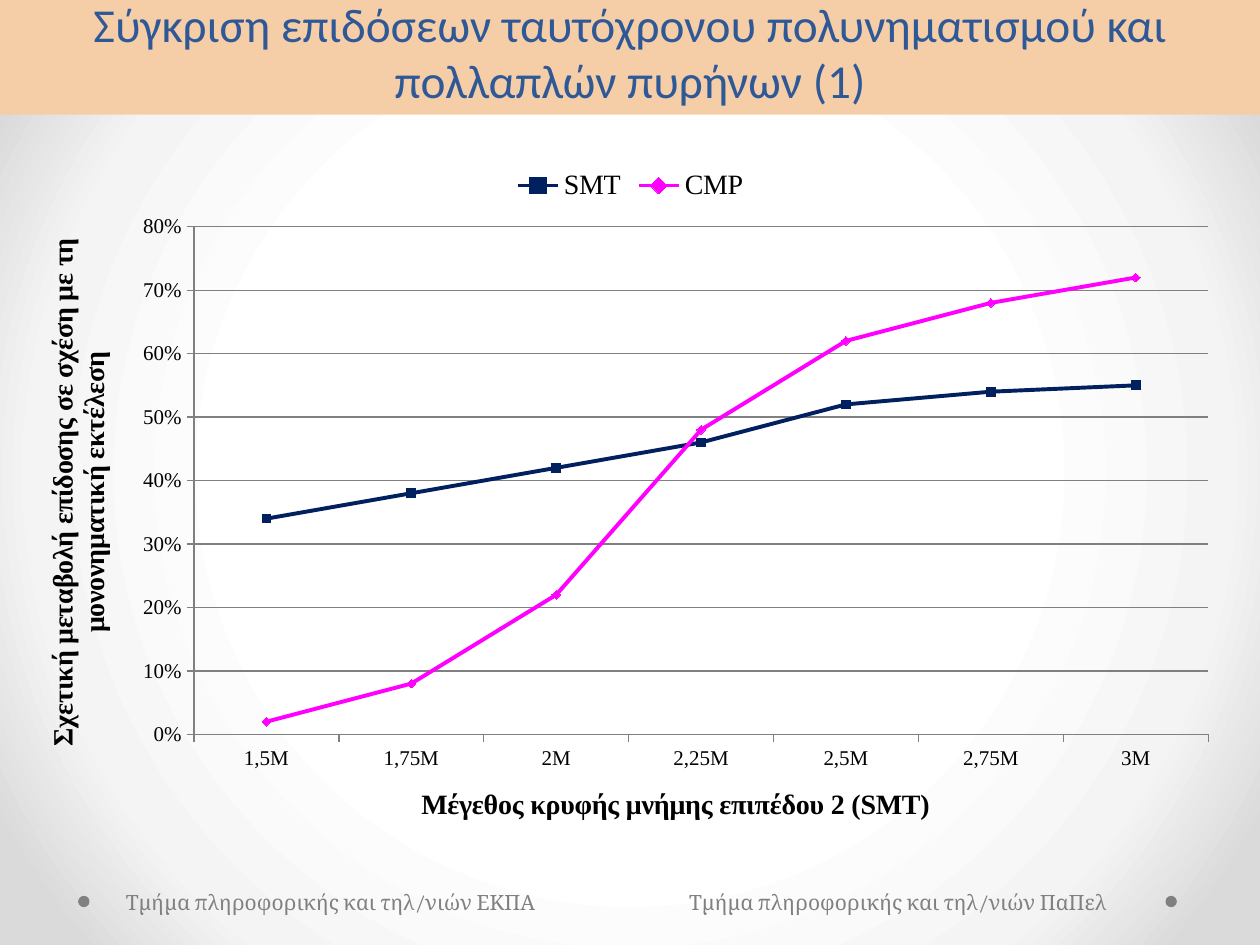
from lxml import etree
from pptx import Presentation
from pptx.chart.data import CategoryChartData
from pptx.dml.color import RGBColor
from pptx.enum.chart import (XL_CHART_TYPE, XL_LEGEND_POSITION,
                             XL_MARKER_STYLE, XL_TICK_MARK)
from pptx.enum.shapes import MSO_SHAPE
from pptx.enum.text import MSO_ANCHOR, MSO_AUTO_SIZE, PP_ALIGN
from pptx.oxml import parse_xml
from pptx.oxml.ns import qn
from pptx.util import Inches, Pt

LINES = XL_CHART_TYPE.LINE_MARKERS
TOP = XL_LEGEND_POSITION.TOP
SQUARE, DIAMOND = XL_MARKER_STYLE.SQUARE, XL_MARKER_STYLE.DIAMOND
OUT = XL_TICK_MARK.OUTSIDE
OVAL = MSO_SHAPE.OVAL
BOTTOM = MSO_ANCHOR.BOTTOM
FIXED = MSO_AUTO_SIZE.NONE
CENTER = PP_ALIGN.CENTER

GREY = "808080"
DRAWML = "http://schemas.openxmlformats.org/drawingml/2006/main"
STOPS = [(50, "FFFFFF"), (76, "F4F4F4"), (92, "DADADA")]

# Chart frame and inner plot area, in inches
FRAME = (0.26, 1.23, 9.49, 5.35)
PLOT = (1.54, 1.80, 8.05, 4.03)

SIZES = ["1,5M", "1,75M", "2M", "2,25M", "2,5M", "2,75M", "3M"]
SERIES = [
    ("SMT", [0.34, 0.38, 0.42, 0.46, 0.52, 0.54, 0.55], "002060", SQUARE),
    ("CMP", [0.02, 0.08, 0.22, 0.48, 0.62, 0.68, 0.72], "FF00FF", DIAMOND),
]


def color(code):
    return RGBColor.from_string(code)


def paint(fill, code):
    fill.solid()
    fill.fore_color.rgb = color(code)


def style(font, name, size, code, bold=False):
    font.name, font.size, font.bold = name, Pt(size), bold
    font.color.rgb = color(code)


def place(shape, box):
    shape.left, shape.top, shape.width, shape.height = map(Inches, box)


def shade(slide):
    """Fill the background with a round gradient."""
    fill = slide.background.fill
    fill.gradient()
    grad = slide.element.find(".//" + qn("a:gradFill"))
    stops = "".join(
        f'<a:gs pos="{pos * 1000}"><a:srgbClr val="{code}"/></a:gs>'
        for pos, code in STOPS)
    grad.getparent().replace(grad, parse_xml(
        f'<a:gradFill xmlns:a="{DRAWML}" rotWithShape="1">'
        f'<a:gsLst>{stops}</a:gsLst><a:path path="circle">'
        '<a:fillToRect l="50000" t="50000" r="50000" b="50000"/>'
        '</a:path></a:gradFill>'))


def add_title(slide, text):
    title = slide.shapes.title
    place(title, (0, 0, 10, 0.91))
    paint(title.fill, "F5CEA7")
    frame = title.text_frame
    frame.text = text
    frame.auto_size = FIXED
    frame.vertical_anchor = BOTTOM
    para = frame.paragraphs[0]
    para.alignment = CENTER
    style(para.font, "Calibri", 27, "2F5897")


def add_dot(slide, left):
    dot = slide.shapes.add_shape(
        OVAL, *map(Inches, (left, 7.11, 0.09, 0.09)))
    dot.shadow.inherit = False
    paint(dot.fill, GREY)
    dot.line.fill.background()


def add_note(slide, left, width, text):
    box = slide.shapes.add_textbox(*map(Inches, (left, 7.01, width, 0.3)))
    box.text_frame.word_wrap = True
    box.text_frame.text = text
    style(box.text_frame.paragraphs[0].font, "Cambria", 12, GREY)


def set_plot(chart):
    """Fix the inner plot area as shares of the chart frame."""
    area = chart.plots[0]._element.getparent()
    old = area.find(qn("c:layout"))
    if old is not None:
        area.remove(old)
    layout = etree.Element(qn("c:layout"))
    manual = etree.SubElement(layout, qn("c:manualLayout"))
    left, top, width, height = FRAME
    x, y, w, h = PLOT
    parts = [("layoutTarget", "inner"), ("xMode", "edge"), ("yMode", "edge"),
             ("x", (x - left) / width), ("y", (y - top) / height),
             ("w", w / width), ("h", h / height)]
    for tag, value in parts:
        etree.SubElement(manual, qn("c:" + tag)).set("val", str(value))
    area.insert(0, layout)


def set_axis(axis, text):
    axis.major_tick_mark = OUT
    axis.format.line.color.rgb = color(GREY)
    axis.format.line.width = Pt(0.75)
    frame = axis.axis_title.text_frame
    frame.text = text
    style(frame.paragraphs[0].font, "Times New Roman", 16, "000000", True)
    return frame


def add_chart(slide):
    data = CategoryChartData(number_format="0%")
    data.categories = SIZES
    for name, values, *_ in SERIES:
        data.add_series(name, values)
    chart = slide.shapes.add_chart(LINES, *map(Inches, FRAME), data).chart
    chart.has_title = False
    style(chart.font, "Times New Roman", 12, "000000")
    set_plot(chart)

    # Legend
    chart.has_legend = True
    chart.legend.position = TOP
    chart.legend.include_in_layout = False
    style(chart.legend.font, "Times New Roman", 16, "000000")

    # Axes
    set_axis(chart.category_axis, "Μέγεθος κρυφής μνήμης επιπέδου 2 (SMT)")
    axis = chart.value_axis
    frame = set_axis(axis, "Σχετική μεταβολή επίδοσης σε σχέση με τη "
                           "μονονηματική εκτέλεση")
    body = frame._txBody.find(qn("a:bodyPr"))
    body.set("rot", "-5400000")
    body.set("vert", "horz")
    axis.minimum_scale, axis.maximum_scale = 0, 0.8
    axis.major_unit = 0.1
    axis.tick_labels.number_format = "0%"
    axis.tick_labels.number_format_is_linked = False
    axis.has_major_gridlines = True
    axis.major_gridlines.format.line.color.rgb = color(GREY)
    axis.major_gridlines.format.line.width = Pt(0.75)

    # Series
    plot = chart.plots[0]
    plot.vary_by_categories = False
    for line, (_, _, code, mark) in zip(plot.series, SERIES):
        line.smooth = False
        line.format.line.color.rgb = color(code)
        line.format.line.width = Pt(2.25)
        line.marker.style, line.marker.size = mark, 5
        paint(line.marker.format.fill, code)
        line.marker.format.line.color.rgb = color(code)


def main():
    deck = Presentation()
    deck.slide_width, deck.slide_height = Inches(10), Inches(7.5)
    slide = deck.slides.add_slide(deck.slide_layouts[5])
    shade(slide)
    for left in (9.25, 0.62):
        add_dot(slide, left)
    add_note(slide, 0.9, 3.94, "Τμήμα πληροφορικής και τηλ/νιών ΕΚΠΑ")
    add_note(slide, 5.37, 3.58, "Τμήμα πληροφορικής και τηλ/νιών ΠαΠελ")
    add_title(slide, "Σύγκριση επιδόσεων ταυτόχρονου πολυνηματισμού και "
                     "πολλαπλών πυρήνων (1)")
    add_chart(slide)
    deck.save("out.pptx")


if __name__ == "__main__":
    main()
